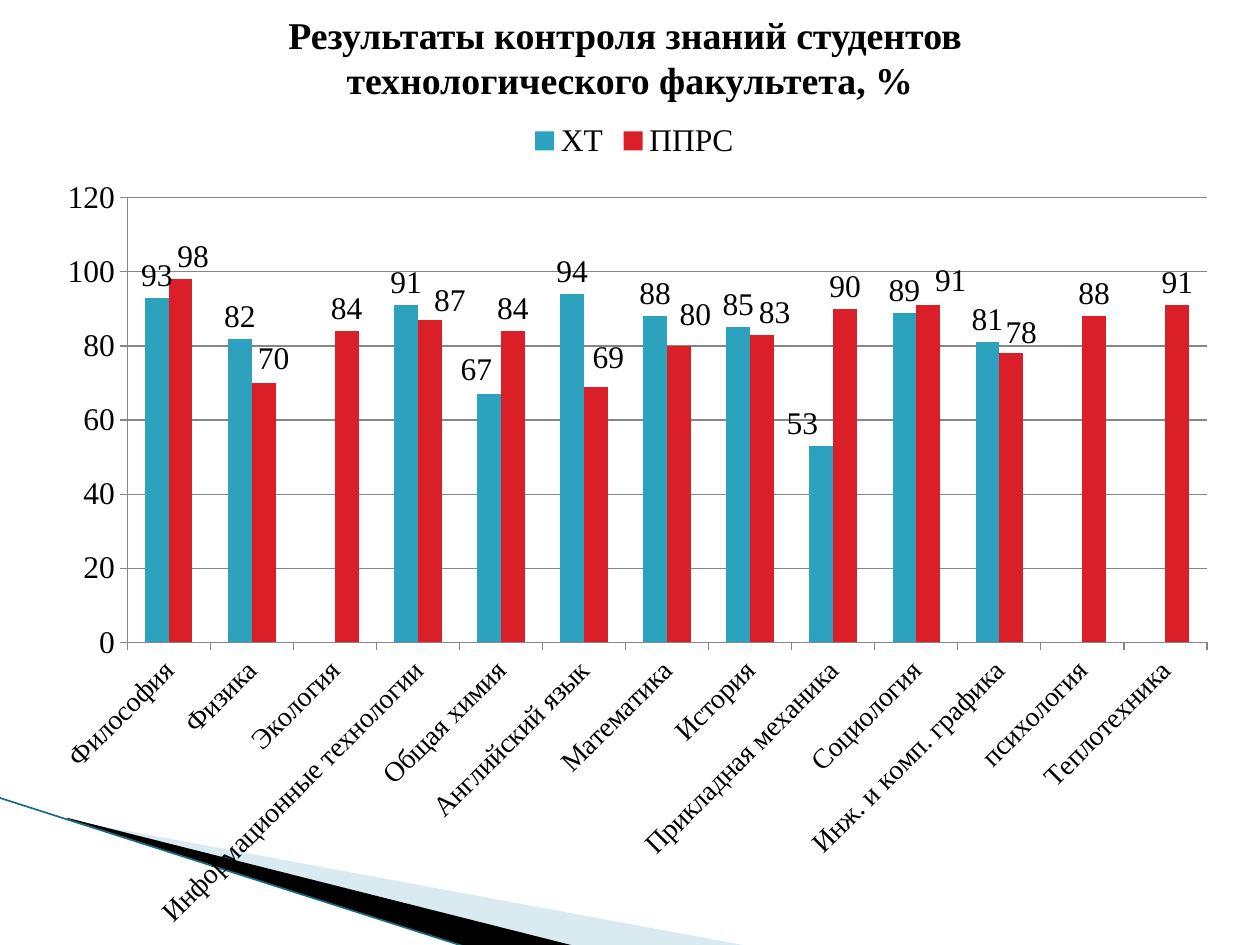
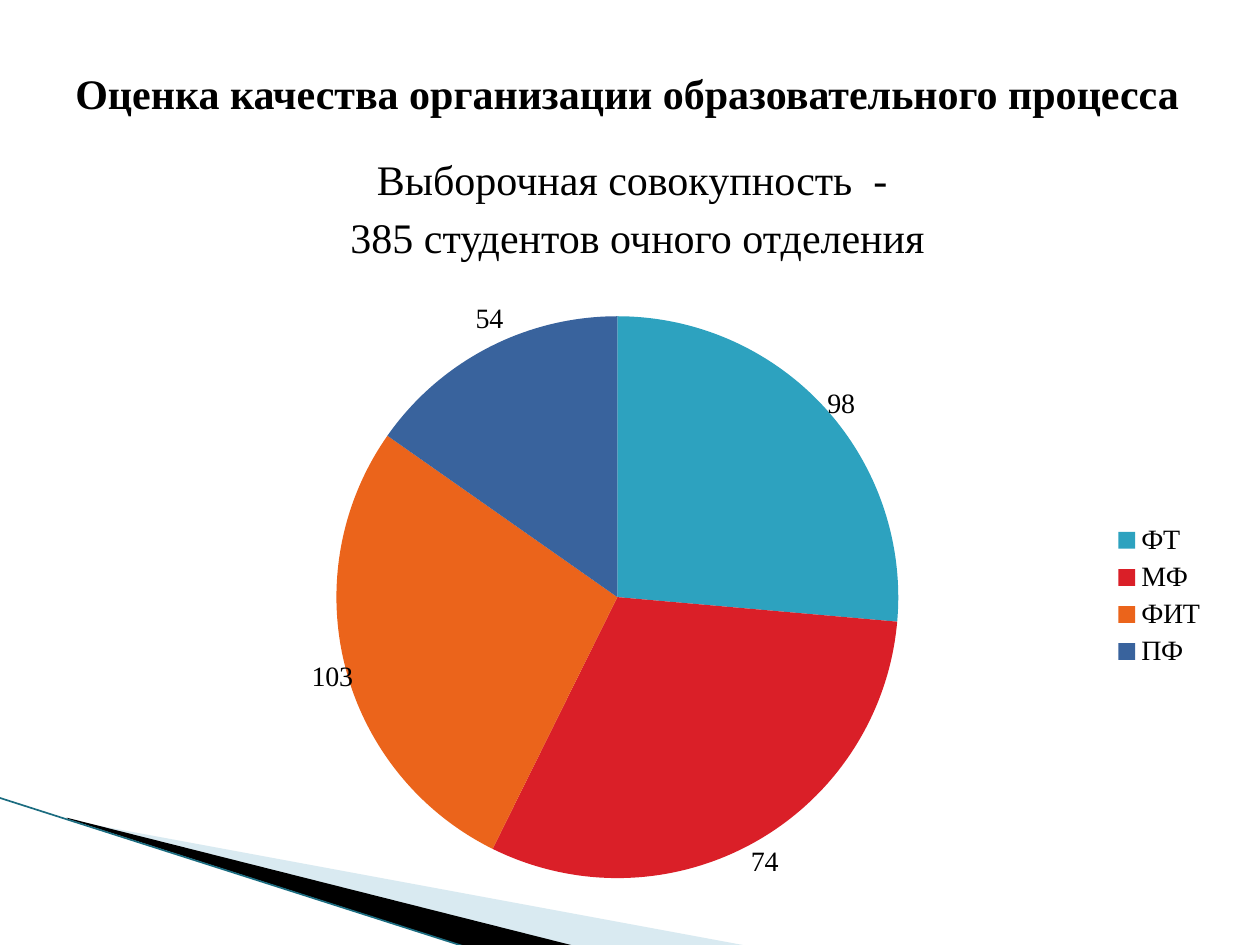
from lxml import etree
from pptx import Presentation
from pptx.chart.data import CategoryChartData
from pptx.dml.color import RGBColor
from pptx.enum.chart import XL_CHART_TYPE, XL_LABEL_POSITION, XL_LEGEND_POSITION, XL_TICK_MARK
from pptx.enum.shapes import MSO_CONNECTOR
from pptx.enum.text import MSO_ANCHOR, PP_ALIGN
from pptx.oxml.ns import qn
from pptx.util import Inches, Pt

COLUMNS, PIE = XL_CHART_TYPE.COLUMN_CLUSTERED, XL_CHART_TYPE.PIE
LABEL_OUTSIDE = XL_LABEL_POSITION.OUTSIDE_END
LEGEND_TOP, LEGEND_RIGHT = XL_LEGEND_POSITION.TOP, XL_LEGEND_POSITION.RIGHT
TICK_OUTSIDE = XL_TICK_MARK.OUTSIDE
STRAIGHT = MSO_CONNECTOR.STRAIGHT
TOP, MIDDLE = MSO_ANCHOR.TOP, MSO_ANCHOR.MIDDLE
LEFT, CENTER = PP_ALIGN.LEFT, PP_ALIGN.CENTER

# Shared look
FONT = "Times New Roman"
BLACK, GRID = "000000", "868686"
TEAL, RED, ORANGE, BLUE = "2DA2BF", "DA1F28", "EB641B", "39639D"
PALE_BAND, BAND_EDGE = "A0CBDC", "1B6C80"

# Chart and plot areas: left, top, width, height in inches
RESULTS_AREA, RESULTS_PLOT = (0.3, 0.86, 9.47, 6.64), (1.01, 1.57, 8.57, 3.53)
SAMPLE_AREA, SAMPLE_PLOT = (0.62, 2.19, 9.06, 5.08), (2.67, 2.51, 4.46, 4.46)

# Chart content
SUBJECTS = [
    ("Философия", 93, 98), ("Физика", 82, 70), ("Экология", None, 84),
    ("Информационные технологии", 91, 87), ("Общая химия", 67, 84),
    ("Английский язык", 94, 69), ("Математика", 88, 80), ("История", 85, 83),
    ("Прикладная механика", 53, 90), ("Социология", 89, 91),
    ("Инж. и комп. графика", 81, 78), ("психология", None, 88),
    ("Теплотехника", None, 91),
]
# Label shifts in inches, by point number
PROGRAMMES = [
    ("ХТ", TEAL, {4: (-0.1, -0.02), 8: (-0.15, 0)}),
    ("ППРС", RED, {0: (0.1, 0), 1: (0.08, -0.02), 3: (0.16, 0.02), 5: (0.1, -0.05),
                   6: (0.13, -0.07), 7: (0.1, 0), 9: (0.18, -0.02), 10: (0.08, 0.01)}),
]
# Faculty, value, label text, colour, label shift
FACULTIES = [
    ("ФТ", 128, "98", TEAL, (-0.02, 0.14)),
    ("МФ", 150, "74", RED, (-0.06, -0.02)),
    ("ФИТ", 133, "103", ORANGE, (0.12, -0.05)),
    ("ПФ", 74, "54", BLUE, (0.15, -0.05)),
]


def rgb(value):
    return RGBColor.from_string(value)


def style_font(font, size, bold=False):
    font.name, font.size, font.bold = FONT, Pt(size), bold
    font.color.rgb = rgb(BLACK)


def paint(target, color):
    target.fill.solid()
    target.fill.fore_color.rgb = rgb(color)


def add_band(page, points, color, opacity=None):
    corners = [(Inches(x), Inches(y)) for x, y in points]
    builder = page.shapes.build_freeform(*corners[0])
    builder.add_line_segments(corners[1:], close=True)
    band = builder.convert_to_shape()
    band.shadow.inherit = False
    band.line.fill.background()
    paint(band, color)
    if opacity is not None:
        tint = band.fill._xPr.find(qn("a:solidFill"))[0]
        etree.SubElement(tint, qn("a:alpha")).set("val", str(opacity * 1000))


def add_corner(page):
    add_band(page, [(0.55, 6.51), (5.95, 7.51), (4.56, 7.51), (0.55, 6.5)], PALE_BAND, 40)
    add_band(page, [(0.53, 6.49), (4.57, 7.51), (3.72, 7.52), (0.54, 6.5)], BLACK)
    edge = page.shapes.add_connector(
        STRAIGHT, Inches(-0.01), Inches(6.33), Inches(3.71), Inches(7.52))
    edge.line.color.rgb = rgb(BAND_EDGE)
    edge.line.width = Pt(0.95)
    etree.SubElement(edge._element.spPr, qn("a:effectLst"))


def add_text(page, area, lines, size, bold=False, align=CENTER, anchor=MIDDLE,
             gap=0, hanging=False):
    box = page.shapes.add_textbox(*map(Inches, area))
    frame = box.text_frame
    frame.word_wrap = True
    frame.vertical_anchor = anchor
    for number, line in enumerate(lines):
        para = frame.add_paragraph() if number else frame.paragraphs[0]
        para.alignment = align
        if number:
            para.space_before = Pt(gap)
        if hanging:
            properties = para._p.get_or_add_pPr()
            properties.set("marL", str(Inches(0.4)))
            properties.set("indent", str(Inches(-0.28)))
        span = para.add_run()
        span.text = line
        style_font(span.font, size, bold)


def add_layout(parent, position, **values):
    """Insert a manual chart layout at the given place among the children."""
    layout = etree.Element(qn("c:layout"))
    manual = etree.SubElement(layout, qn("c:manualLayout"))
    for tag, value in values.items():
        etree.SubElement(manual, qn("c:" + tag)).set("val", str(value))
    parent.insert(position, layout)


def place_plot(chart, area, plot):
    """Set the inner plot area, given like the chart area in page inches."""
    plot_area = chart._chartSpace.chart.plotArea
    for old in plot_area.findall(qn("c:layout")):
        plot_area.remove(old)
    left, top, width, height = area
    x, y, w, h = plot
    add_layout(plot_area, 0, layoutTarget="inner", xMode="edge", yMode="edge",
               x=(x - left) / width, y=(y - top) / height, w=w / width, h=h / height)


def shift_label(label, shift, area):
    add_layout(label._get_or_add_dLbl(), 1, x=shift[0] / area[2], y=shift[1] / area[3])


def show_values(series, size, leaders):
    labels = series.data_labels
    labels.show_value = True
    labels.position = LABEL_OUTSIDE
    style_font(labels.font, size)
    for flag in labels._element.findall(qn("c:showLeaderLines")):
        flag.set("val", str(int(leaders)))


def add_chart(page, kind, area, categories, series, size, legend):
    data = CategoryChartData()
    data.categories = categories
    for name, values in series:
        data.add_series(name, values)
    chart = page.shapes.add_chart(kind, *map(Inches, area), data).chart
    chart.has_title = False
    style_font(chart.font, size)
    chart.has_legend = True
    chart.legend.position = legend
    chart.legend.include_in_layout = False
    style_font(chart.legend.font, size)
    return chart


def style_axis(axis, size):
    axis.major_tick_mark = TICK_OUTSIDE
    axis.format.line.color.rgb = rgb(GRID)
    style_font(axis.tick_labels.font, size)


def add_results_chart(page):
    names, first, second = zip(*SUBJECTS)
    series_values = [(item[0], values) for item, values in zip(PROGRAMMES, (first, second))]
    chart = add_chart(page, COLUMNS, RESULTS_AREA, names, series_values, 18, LEGEND_TOP)
    place_plot(chart, RESULTS_AREA, RESULTS_PLOT)

    plot = chart.plots[0]
    plot.gap_width, plot.overlap, plot.vary_by_categories = 150, 0, False
    for series, (_, color, shifts) in zip(plot.series, PROGRAMMES):
        paint(series.format, color)
        series.invert_if_negative = False
        show_values(series, 18, leaders=False)
        for number, shift in shifts.items():
            label = series.points[number].data_label
            style_font(label.font, 18)
            label.position = LABEL_OUTSIDE
            shift_label(label, shift, RESULTS_AREA)

    # Axes
    style_axis(chart.category_axis, 16)
    rotation = chart.category_axis._element.find(qn("c:txPr")).find(qn("a:bodyPr"))
    rotation.set("rot", str(-45 * 60000))
    scale = chart.value_axis
    style_axis(scale, 18)
    scale.minimum_scale, scale.maximum_scale, scale.major_unit = 0, 120, 20
    scale.has_major_gridlines = True
    scale.major_gridlines.format.line.color.rgb = rgb(GRID)


def add_sample_chart(page):
    names, values, *_ = zip(*FACULTIES)
    chart = add_chart(page, PIE, SAMPLE_AREA, names, [("Series 1", values)], 16, LEGEND_RIGHT)
    place_plot(chart, SAMPLE_AREA, SAMPLE_PLOT)
    chart.plots[0].vary_by_categories = True
    series = chart.plots[0].series[0]
    show_values(series, 16, leaders=True)
    for number, (_, _, text, color, shift) in enumerate(FACULTIES):
        point = series.points[number]
        paint(point.format, color)
        label = point.data_label
        span = label.text_frame.paragraphs[0].add_run()
        span.text = text
        style_font(span.font, 16)
        label.position = LABEL_OUTSIDE
        shift_label(label, shift, SAMPLE_AREA)


def add_page(deck):
    page = deck.slides.add_slide(deck.slide_layouts[6])
    add_corner(page)
    return page


def main():
    deck = Presentation()
    deck.slide_width, deck.slide_height = Inches(10), Inches(7.5)

    # Test results by subject
    page = add_page(deck)
    add_results_chart(page)
    add_text(page, (0.5, 0.04, 9, 0.82),
             ["Результаты контроля знаний студентов ", "технологического факультета, %"],
             21.6, bold=True)

    # Survey sample by faculty
    page = add_page(deck)
    add_text(page, (0.5, 1.17, 9, 6.02),
             ["Выборочная совокупность  - ", "385 студентов очного отделения"],
             24, anchor=TOP, gap=4.5, hanging=True)
    add_text(page, (0.5, 0.3, 9, 0.87),
             ["Оценка качества организации образовательного процесса"],
             24, bold=True, align=LEFT)
    add_sample_chart(page)

    deck.save("out.pptx")


if __name__ == "__main__":
    main()
